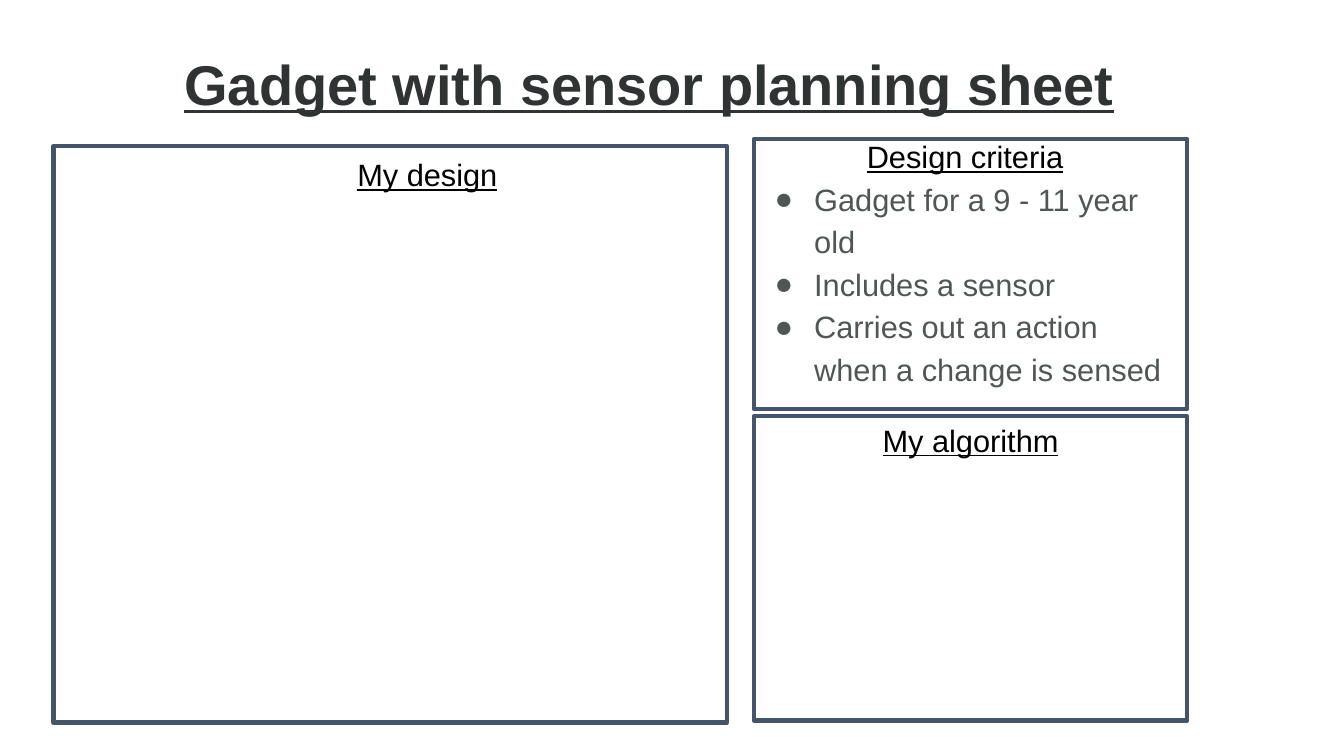
from dataclasses import dataclass

from lxml.etree import SubElement
from pptx import Presentation
from pptx.dml.color import RGBColor
from pptx.enum.shapes import MSO_SHAPE as Shape
from pptx.enum.text import MSO_ANCHOR as Anchor, PP_ALIGN as Align
from pptx.oxml.ns import qn
from pptx.util import Cm, Pt


@dataclass(frozen=True)
class Theme:
    font: str = "Arial"
    title_color: str = "303333"
    heading_color: str = "000000"
    body_color: str = "505555"
    frame_color: str = "44546A"
    title_size: int = 40
    body_size: int = 22
    frame_width: int = 3


THEME = Theme()
CRITERIA = (
    "Gadget for a 9 - 11 year old",
    "Includes a sensor",
    "Carries out an action when a change is sensed",
)


def add_frame(page, left, top, width, height):
    frame = page.shapes.add_shape(
        Shape.RECTANGLE, Cm(left), Cm(top), Cm(width), Cm(height)
    )
    frame.shadow.inherit = False
    frame.fill.background()
    frame.line.color.rgb = RGBColor.from_string(THEME.frame_color)
    frame.line.width = Pt(THEME.frame_width)


def add_box(page, left, top, width, height, inset=0.25):
    box = page.shapes.add_textbox(Cm(left), Cm(top), Cm(width), Cm(height))
    frame = box.text_frame
    frame.word_wrap = True
    frame.vertical_anchor = Anchor.TOP
    frame.margin_left = frame.margin_right = Cm(inset)
    frame.margin_top = frame.margin_bottom = Cm(inset)
    return frame


def write(para, text, size, color, underline=False, bold=False):
    para.text = text
    for span in para.runs:
        font = span.font
        font.name = THEME.font
        font.size = Pt(size)
        font.bold = bold
        font.underline = underline
        font.color.rgb = RGBColor.from_string(color)


def add_title(page, text):
    frame = add_box(page, 2.29, 0.99, 28.14, 1.55, inset=0)
    frame.margin_top = Cm(0.13)
    para = frame.paragraphs[0]
    write(para, text, THEME.title_size, THEME.title_color, underline=True, bold=True)
    para.alignment = Align.CENTER
    para.line_spacing = 1.07


def add_heading(page, text, left, top, width, height):
    frame = add_box(page, left, top, width, height)
    para = frame.paragraphs[0]
    write(para, text, THEME.body_size, THEME.heading_color, underline=True)
    para.alignment = Align.CENTER
    return frame


def add_bullet(frame, text):
    para = frame.add_paragraph()
    write(para, text, THEME.body_size, THEME.body_color)
    para.alignment = Align.LEFT
    para.line_spacing = 1.15
    properties = para._p.get_or_add_pPr()
    properties.set("marL", str(Cm(1.27)))
    properties.set("indent", str(-Cm(1.0)))
    color = SubElement(properties, qn("a:buClr"))
    SubElement(color, qn("a:srgbClr"), val=THEME.body_color)
    SubElement(properties, qn("a:buFont"), typeface=THEME.font)
    SubElement(properties, qn("a:buChar"), char="●")


def main():
    deck = Presentation()
    deck.slide_width, deck.slide_height = Cm(33.87), Cm(19.05)
    page = deck.slides.add_slide(deck.slide_layouts[6])

    add_title(page, "Gadget with sensor planning sheet")
    add_frame(page, 1.35, 3.68, 16.97, 14.53)
    add_frame(page, 19.0, 10.49, 10.92, 7.67)
    add_frame(page, 19.0, 3.5, 10.92, 6.81)

    add_heading(page, "My design", 5.92, 3.68, 9.7, 0.94)
    add_heading(page, "My algorithm", 19.61, 10.37, 9.7, 0.94)
    criteria = add_heading(page, "Design criteria", 19.0, 3.23, 10.64, 6.1)
    for criterion in CRITERIA:
        add_bullet(criteria, criterion)

    deck.save("out.pptx")


if __name__ == "__main__":
    main()
